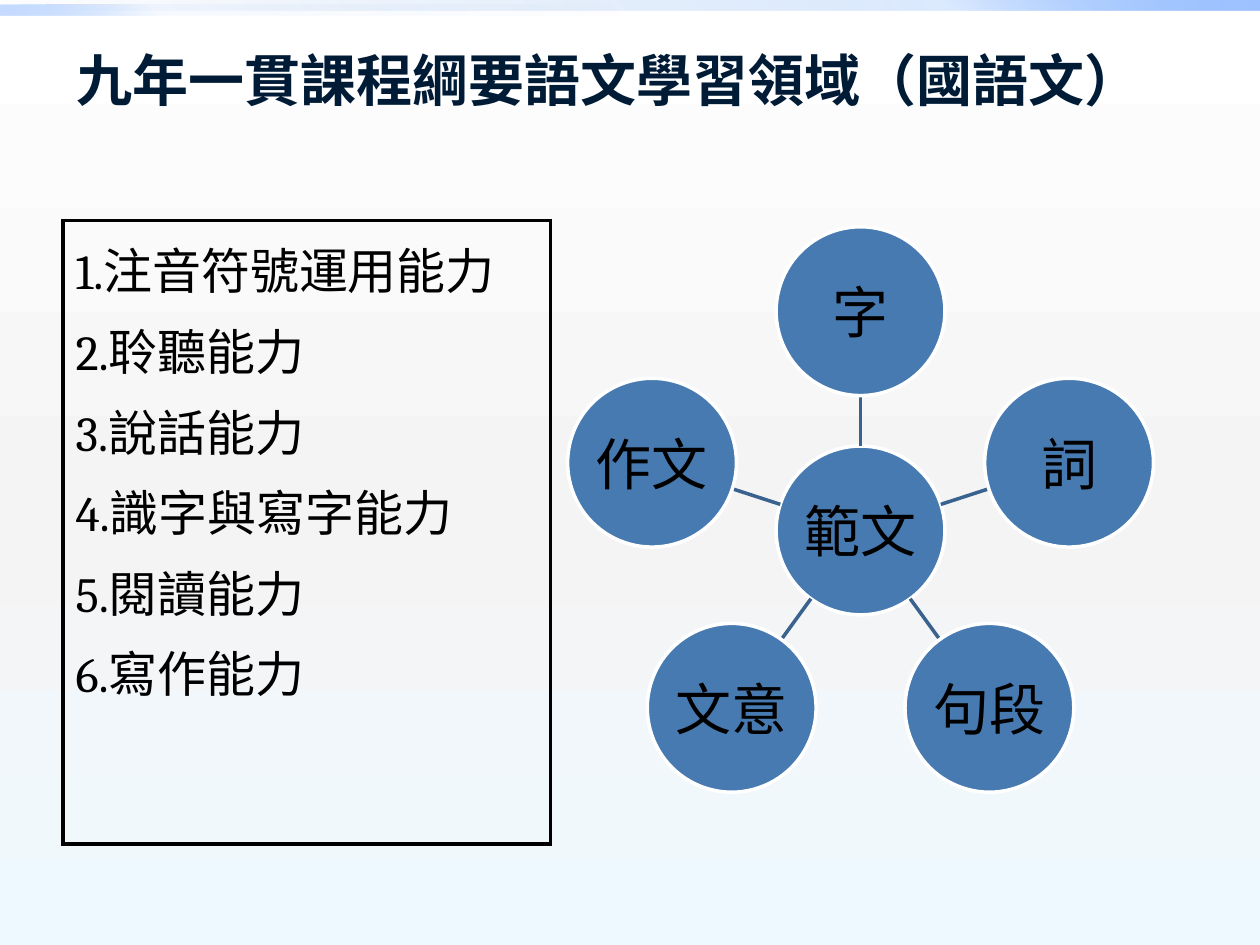
from math import cos, radians, sin

from lxml import etree
from pptx import Presentation
from pptx.dml.color import RGBColor
from pptx.enum.shapes import MSO_CONNECTOR, MSO_SHAPE
from pptx.enum.text import MSO_ANCHOR, PP_ALIGN
from pptx.oxml.ns import qn
from pptx.util import Inches, Pt

RECTANGLE = MSO_SHAPE.RECTANGLE
OVAL = MSO_SHAPE.OVAL
STRAIGHT = MSO_CONNECTOR.STRAIGHT
MIDDLE = MSO_ANCHOR.MIDDLE
CENTER = PP_ALIGN.CENTER

BLACK = RGBColor(0x00, 0x00, 0x00)
WHITE = RGBColor(0xFF, 0xFF, 0xFF)
NAVY = RGBColor(0x00, 0x1B, 0x36)
CIRCLE_BLUE = RGBColor(0x47, 0x7A, 0xB1)
SPOKE_BLUE = RGBColor(0x39, 0x62, 0x8E)
PALE_GRAY = RGBColor(0xF4, 0xF4, 0xF4)
ICE_BLUE = RGBColor(0xEE, 0xF9, 0xFF)
DEEP_BLUE = RGBColor(0x00, 0x58, 0xB7)
BRIGHT_BLUE = RGBColor(0x4F, 0x95, 0xFF)
LIGHT_BLUE = RGBColor(0x9E, 0xC2, 0xFF)

BACKGROUND_STOPS = [(0, WHITE, 100), (55, PALE_GRAY, 100), (100, ICE_BLUE, 100)]
TOP_BAR_STOPS = [(0, DEEP_BLUE, 0), (75, BRIGHT_BLUE, 20), (100, LIGHT_BLUE, 100)]
LOWER_BAR_STOPS = [(0, DEEP_BLUE, 0), (75, BRIGHT_BLUE, 5), (100, LIGHT_BLUE, 60)]

TITLE = "九年一貫課程綱要語文學習領域（國語文）"
ABILITIES = [
    "1.注音符號運用能力",
    "2.聆聽能力",
    "3.說話能力",
    "4.識字與寫字能力",
    "5.閱讀能力",
    "6.寫作能力",
]
HUB = "範文"
TOPICS = ["字", "詞", "句段", "文意", "作文"]
HUB_X, HUB_Y = 6.83, 4.21
ORBIT = 1.74
CIRCLE_RADIUS = 0.67


def style_font(font, name, size, color, bold=False):
    font.name = name
    font.size = Pt(size)
    font.bold = bold
    font.color.rgb = color


def set_gradient(fill, element, stops, angle):
    fill.gradient()
    fill.gradient_angle = angle
    stop_list = next(element.iter(qn("a:gsLst")))
    for stop in list(stop_list):
        stop_list.remove(stop)
    for position, color, opacity in stops:
        stop = etree.SubElement(stop_list, qn("a:gs"), pos=str(position * 1000))
        color_element = etree.SubElement(stop, qn("a:srgbClr"), val=str(color))
        if opacity < 100:
            etree.SubElement(color_element, qn("a:alpha"), val=str(opacity * 1000))


def add_bar(slide, top, width, stops, angle):
    bar = slide.shapes.add_shape(RECTANGLE, 0, Inches(top), Inches(width), Inches(0.08))
    bar.shadow.inherit = False
    bar.line.fill.background()
    set_gradient(bar.fill, bar.element, stops, angle)


def add_title(slide):
    title = slide.shapes.add_textbox(Inches(0.51), Inches(0.28), Inches(9), Inches(0.69))
    text_frame = title.text_frame
    text_frame.word_wrap = True
    text_frame.vertical_anchor = MIDDLE
    text_frame.text = TITLE
    style_font(text_frame.paragraphs[0].runs[0].font, "Roboto", 32, NAVY, bold=True)


def add_cell_borders(cell, color, width):
    properties = cell._tc.get_or_add_tcPr()
    for side in ("a:lnL", "a:lnR", "a:lnT", "a:lnB"):
        line = etree.SubElement(properties, qn(side), w=str(Pt(width)))
        fill = etree.SubElement(line, qn("a:solidFill"))
        etree.SubElement(fill, qn("a:srgbClr"), val=str(color))


def add_ability_table(slide):
    frame = slide.shapes.add_table(
        1, 1, Inches(0.5), Inches(1.75), Inches(3.87), Inches(4.95)
    )
    table = frame.table
    table.first_row = False
    table.horz_banding = False
    cell = table.cell(0, 0)
    add_cell_borders(cell, BLACK, 2.25)
    cell.fill.background()
    cell.margin_top = Inches(0.1)
    cell.text_frame.text = "\n".join(ABILITIES)
    for index, paragraph in enumerate(cell.text_frame.paragraphs):
        if index:
            paragraph.space_before = Pt(5.6)
        style_font(paragraph.runs[0].font, "Cambria", 28, BLACK)


def add_circle(slide, label, x, y):
    diameter = Inches(2 * CIRCLE_RADIUS)
    circle = slide.shapes.add_shape(
        OVAL, Inches(x - CIRCLE_RADIUS), Inches(y - CIRCLE_RADIUS), diameter, diameter
    )
    circle.shadow.inherit = False
    circle.fill.solid()
    circle.fill.fore_color.rgb = CIRCLE_BLUE
    circle.line.color.rgb = WHITE
    circle.line.width = Pt(2)
    text_frame = circle.text_frame
    text_frame.margin_left = text_frame.margin_right = Inches(0.02)
    text_frame.margin_top = text_frame.margin_bottom = Inches(0.02)
    text_frame.word_wrap = False
    text_frame.vertical_anchor = MIDDLE
    text_frame.text = label
    paragraph = text_frame.paragraphs[0]
    paragraph.alignment = CENTER
    style_font(paragraph.runs[0].font, "Arial", 32, BLACK)


def point_from_hub(angle, distance):
    return HUB_X + distance * sin(angle), HUB_Y - distance * cos(angle)


def add_spoke(slide, angle):
    start = point_from_hub(angle, CIRCLE_RADIUS)
    end = point_from_hub(angle, ORBIT - CIRCLE_RADIUS)
    spoke = slide.shapes.add_connector(
        STRAIGHT, *(Inches(value) for value in start + end)
    )
    spoke.line.color.rgb = SPOKE_BLUE
    spoke.line.width = Pt(2)
    etree.SubElement(spoke.element.spPr, qn("a:effectLst"))


def add_topic_wheel(slide):
    add_circle(slide, HUB, HUB_X, HUB_Y)
    for index, topic in enumerate(TOPICS):
        angle = radians(index * 360 / len(TOPICS))
        add_spoke(slide, angle)
        add_circle(slide, topic, *point_from_hub(angle, ORBIT))


def main():
    presentation = Presentation()
    presentation.slide_width = Inches(10)
    presentation.slide_height = Inches(7.5)
    slide = presentation.slides.add_slide(presentation.slide_layouts[6])
    set_gradient(slide.background.fill, slide.element, BACKGROUND_STOPS, 270)
    add_bar(slide, 0, 10, TOP_BAR_STOPS, 45)
    add_bar(slide, 0.04, 5, LOWER_BAR_STOPS, 225)
    add_title(slide)
    add_topic_wheel(slide)
    add_ability_table(slide)
    presentation.save("out.pptx")


if __name__ == "__main__":
    main()
